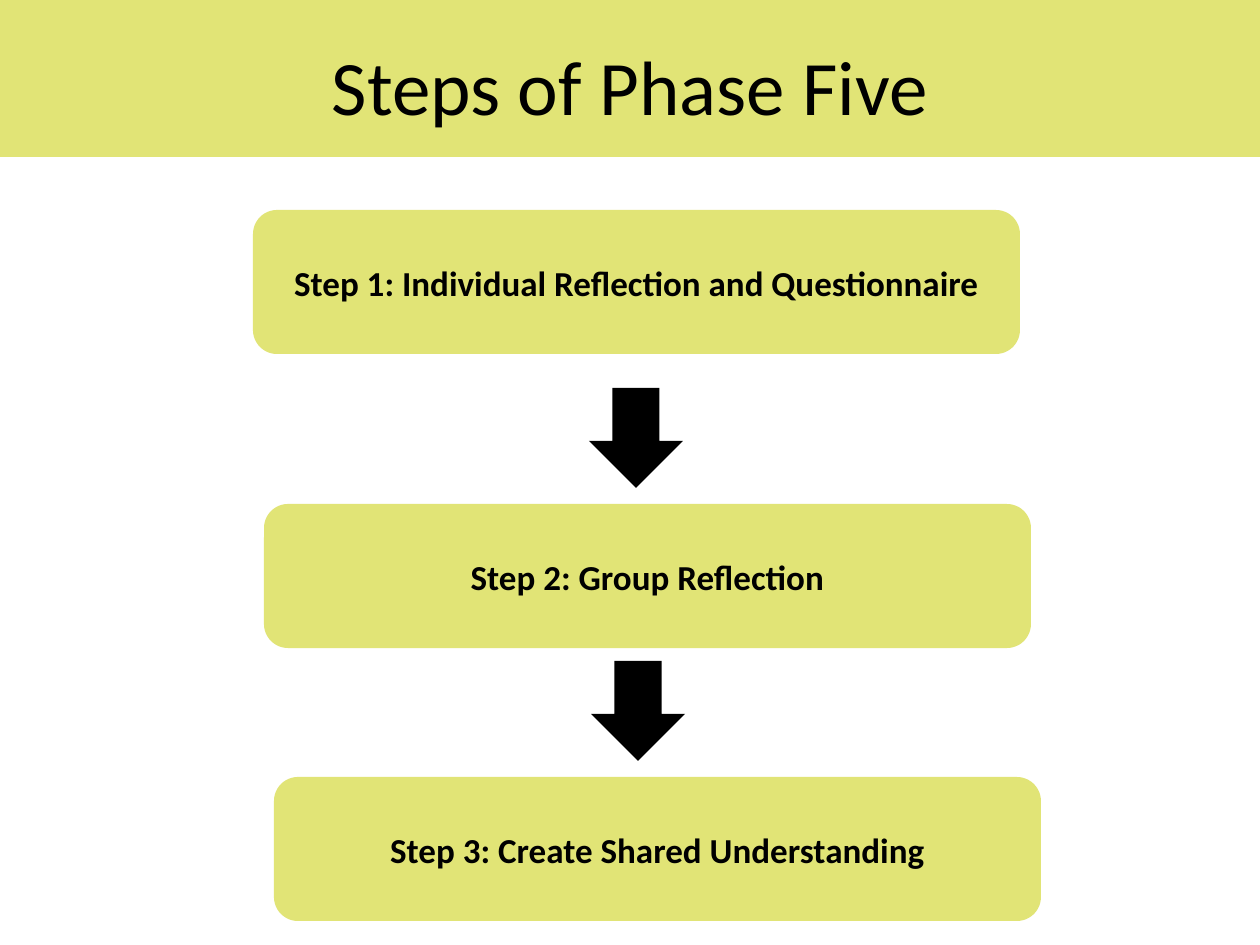
from pptx import Presentation
from pptx.dml.color import RGBColor
from pptx.enum.shapes import MSO_SHAPE
from pptx.enum.text import MSO_ANCHOR, PP_ALIGN
from pptx.util import Emu, Pt

RECT, ROUNDED, DOWN = MSO_SHAPE.RECTANGLE, MSO_SHAPE.ROUNDED_RECTANGLE, MSO_SHAPE.DOWN_ARROW
MIDDLE, CENTER = MSO_ANCHOR.MIDDLE, PP_ALIGN.CENTER
PX = 914400 // 126
COLORS = {"lime": "E1E476", "black": "000000"}
FONT = "Calibri"

STEPS = [
    ("Step 1: Individual Reflection and Questionnaire", (253, 210)),
    ("Step 2: Group Reflection", (264, 504)),
    ("Step 3: Create Shared Understanding", (274, 777)),
]
STEP_SIZE = (767, 144)
ARROWS = [(589, 388), (591, 661)]
ARROW_SIZE = (94, 100)


def px(*values):
    return [Emu(v * PX) for v in values]


def color(name):
    return RGBColor.from_string(COLORS[name])


def add_block(slide, kind, box, fill):
    sp = slide.shapes.add_shape(kind, *px(*box))
    sp.shadow.inherit = False
    sp.fill.solid()
    sp.fill.fore_color.rgb = color(fill)
    sp.line.fill.background()
    return sp


def write(sp, text, size, bold):
    tf = sp.text_frame
    tf.word_wrap = True
    tf.vertical_anchor = MIDDLE
    p = tf.paragraphs[0]
    p.alignment = CENTER
    r = p.add_run()
    r.text = text
    r.font.name, r.font.size, r.font.bold = FONT, Pt(size), bold
    r.font.color.rgb = color("black")


def add_header(slide, box, text):
    """Full-width band with the slide title centred in it."""
    x, y, w, h = box
    band = add_block(slide, RECT, box, "lime")
    title = slide.shapes.title
    # The band goes behind the title placeholder.
    title._element.addprevious(band._element)
    title.left, title.top, title.width, title.height = px(x + 168, y + 32, w - 336, h - 52)
    write(title, text, 44, False)


def add_steps(slide):
    for text, corner in STEPS:
        write(add_block(slide, ROUNDED, corner + STEP_SIZE, "lime"), text, 20, True)
    for corner in ARROWS:
        add_block(slide, DOWN, corner + ARROW_SIZE, "black")


def main():
    prs = Presentation()
    prs.slide_width, prs.slide_height = px(1260, 945)
    slide = prs.slides.add_slide(prs.slide_layouts[5])
    add_header(slide, (0, 0, 1260, 157), "Steps of Phase Five")
    add_steps(slide)
    prs.save("out.pptx")


if __name__ == "__main__":
    main()
